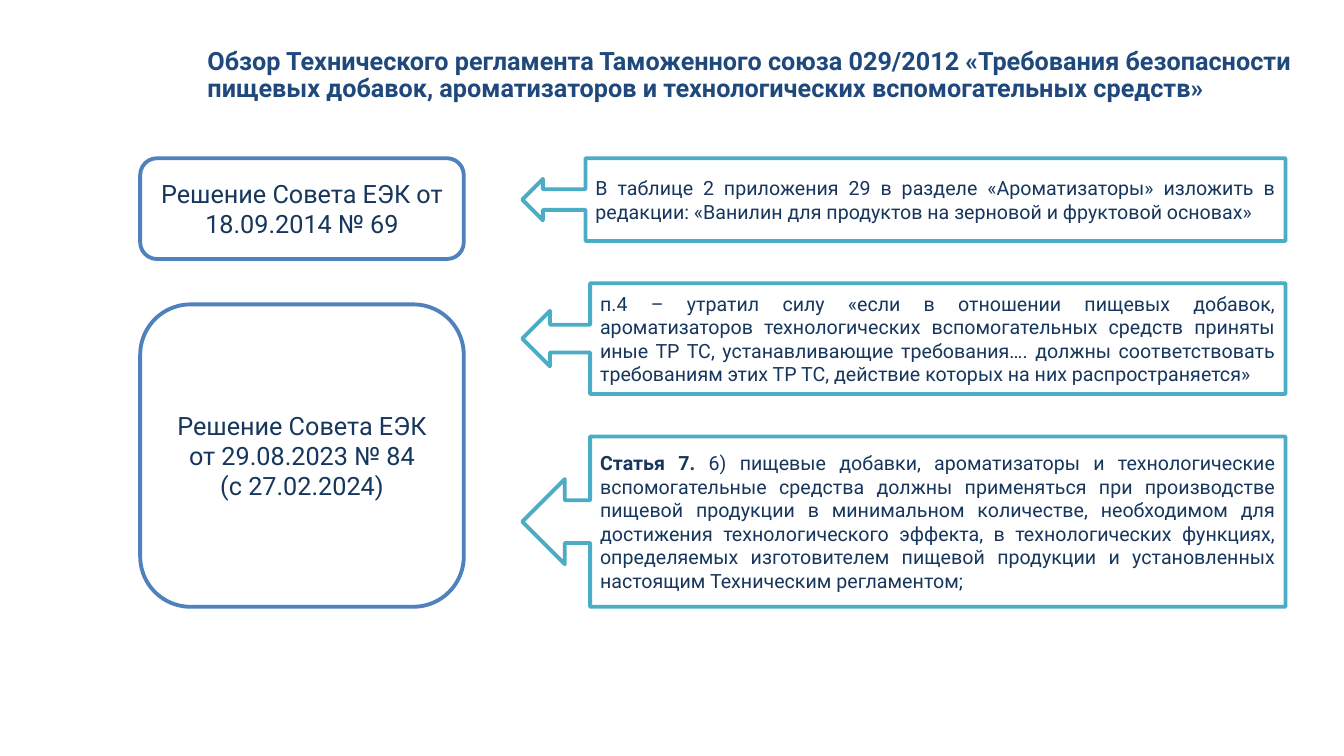
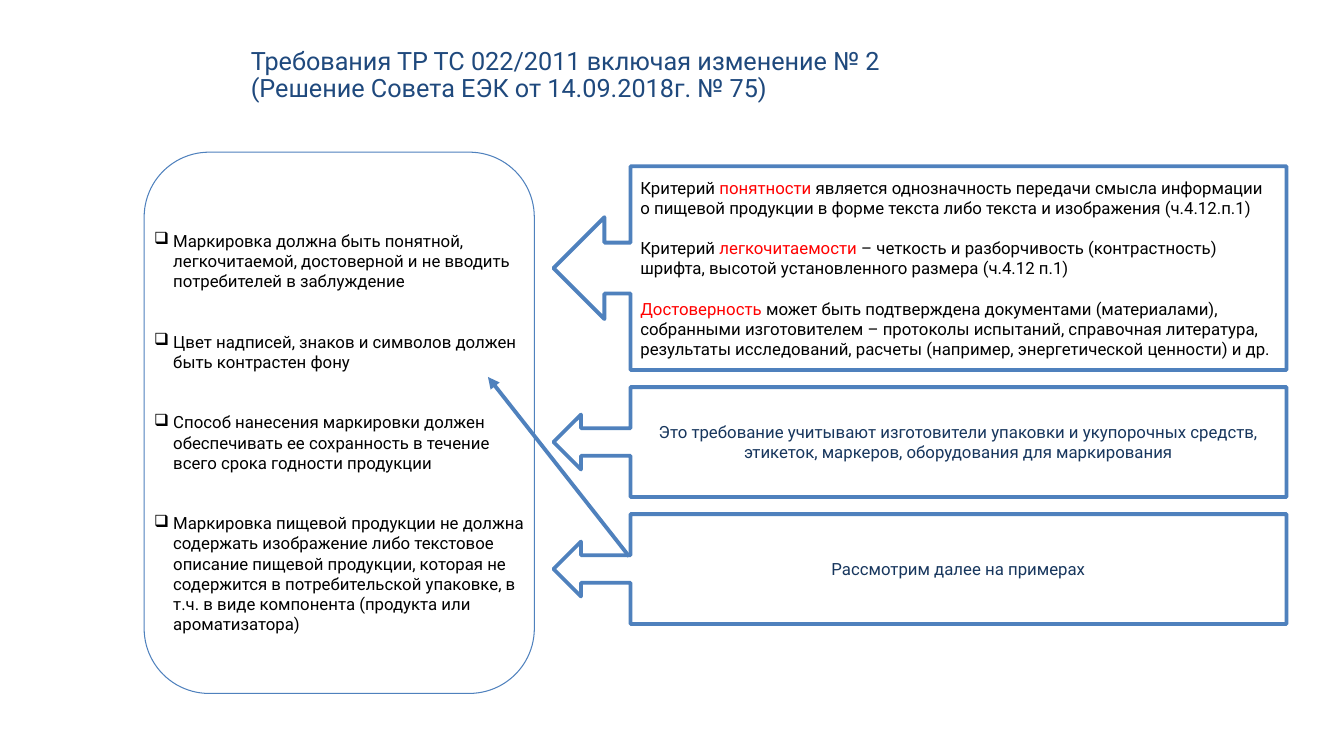
from lxml import etree
from pptx import Presentation
from pptx.dml.color import RGBColor
from pptx.enum.shapes import MSO_CONNECTOR, MSO_SHAPE
from pptx.enum.text import MSO_ANCHOR, PP_ALIGN
from pptx.oxml.ns import qn
from pptx.util import Inches, Pt

FONT = "Roboto"
COLORS = {
    "title": "1F497D", "navy": "17365D", "blue": "4F81BD", "teal": "4BACC6",
    "white": "FFFFFF", "black": "000000", "red": "FF0000",
}
THICK, THIN = 2.75, 0.75
BULLET_INDENT = 0.19

# Content: text is a list of paragraphs; a paragraph is a string or a list of
# (text, overrides) runs
RED = {"color": "red"}

AMENDMENTS_TITLE = (
    "Обзор Технического регламента Таможенного союза 029/2012 «Требования безопасности "
    "пищевых добавок, ароматизаторов и технологических вспомогательных средств»")
DECISIONS = [  # height, paragraphs
    (1, ["Решение Совета ЕЭК от 18.09.2014 № 69"]),
    (3, ["Решение Совета ЕЭК от 29.08.2023 № 84", "(с 27.02.2024)"]),
]
AMENDMENTS = [  # height, share of the width taken by the box, paragraphs
    (0.82, 0.917, [
        "В таблице 2 приложения 29 в разделе «Ароматизаторы» изложить в редакции: "
        "«Ванилин для продуктов на зерновой и фруктовой основах»"]),
    (1.1, 0.911, [
        "п.4 – утратил силу «если в отношении пищевых добавок, ароматизаторов "
        "технологических вспомогательных средств приняты иные ТР ТС, устанавливающие "
        "требования…. должны соответствовать требованиям этих ТР ТС, действие которых "
        "на них распространяется»"]),
    (1.69, 0.911, [[
        ("Статья 7. ", {"bold": True}),
        ("6) пищевые добавки, ароматизаторы и технологические вспомогательные средства "
         "должны применяться при производстве пищевой продукции в минимальном количестве, "
         "необходимом для достижения технологического эффекта, в технологических функциях, "
         "определяемых изготовителем пищевой продукции и установленных настоящим "
         "Техническим регламентом;", {})]]),
]

LABELLING_TITLE = ("Требования ТР ТС 022/2011 включая изменение № 2\n"
                   "(Решение Совета ЕЭК от 14.09.2018г. № 75)")
REQUIREMENTS = [
    "Маркировка должна быть понятной, легкочитаемой, достоверной и не вводить "
    "потребителей в заблуждение",
    "Цвет надписей, знаков и символов должен быть контрастен фону",
    "Способ нанесения маркировки должен обеспечивать ее сохранность в течение всего "
    "срока годности продукции",
    "Маркировка пищевой продукции не должна содержать изображение либо текстовое "
    "описание пищевой продукции, которая не содержится в потребительской упаковке, "
    "в т.ч. в виде компонента (продукта или ароматизатора)",
]
CRITERIA = [
    [("Критерий ", {}), ("понятности", RED),
     (" является однозначность передачи смысла информации о пищевой продукции в форме "
      "текста либо текста и изображения (ч.4.12.п.1)", {})],
    [("Критерий ", {}), ("легкочитаемости", RED),
     (" – четкость и разборчивость (контрастность) шрифта, высотой установленного "
      "размера (ч.4.12 п.1)", {})],
    [("Достоверность", RED),
     (" может быть подтверждена документами (материалами), собранными изготовителем – "
      "протоколы испытаний, справочная литература, результаты исследований, расчеты "
      "(например, энергетической ценности) и др.", {})],
]
EXPLANATIONS = [  # height, paragraphs, text format
    (2.02, CRITERIA, {"color": "black", "gap": 14.4}),
    (1.09, ["Это требование учитывают изготовители упаковки и укупорочных средств, "
            "этикеток, маркеров, оборудования для маркирования"],
     {"align": PP_ALIGN.CENTER}),
    (1.09, ["Рассмотрим далее на примерах"], {"align": PP_ALIGN.CENTER}),
]


def rgb(name):
    return RGBColor.from_string(COLORS[name])


def add_bullet(paragraph):
    properties = paragraph._p.get_or_add_pPr()
    properties.set("marL", str(Inches(BULLET_INDENT)))
    properties.set("indent", str(-Inches(BULLET_INDENT)))
    etree.SubElement(properties, qn("a:buChar")).set("char", "❑")


def write_text(shape, paragraphs, size=12, color="navy", bold=False, align=PP_ALIGN.LEFT,
               anchor=MSO_ANCHOR.MIDDLE, gap=0, spacing=None, bullets=False):
    frame = shape.text_frame
    frame.word_wrap = True
    frame.vertical_anchor = anchor
    for index, runs in enumerate(paragraphs):
        paragraph = frame.add_paragraph() if index else frame.paragraphs[0]
        if bullets:
            add_bullet(paragraph)
        paragraph.alignment = align
        if spacing:
            paragraph.line_spacing = spacing
        if index and gap:
            paragraph.space_before = Pt(gap)
        for text, changes in [(runs, {})] if isinstance(runs, str) else runs:
            for number, line in enumerate(text.split("\n")):
                if number:
                    paragraph.add_line_break()
                run = paragraph.add_run()
                run.text = line
                run.font.name = FONT
                run.font.size = Pt(size)
                run.font.bold = changes.get("bold", bold)
                run.font.color.rgb = rgb(changes.get("color", color))


def add_text(slide, box, paragraphs, **style):
    textbox = slide.shapes.add_textbox(*map(Inches, box))
    write_text(textbox, paragraphs, anchor=MSO_ANCHOR.TOP, **style)


def add_box(slide, kind, box, line="blue", width=THICK, fill="white"):
    shape = slide.shapes.add_shape(kind, *map(Inches, box))
    shape.shadow.inherit = False
    if fill:
        shape.fill.solid()
        shape.fill.fore_color.rgb = rgb(fill)
    else:
        shape.fill.background()
    shape.line.color.rgb = rgb(line)
    shape.line.width = Pt(width)
    return shape


def add_callout(slide, box, share, line, paragraphs, **style):
    callout = add_box(slide, MSO_SHAPE.LEFT_ARROW_CALLOUT, box, line)
    callout.adjustments[3] = share
    write_text(callout, paragraphs, **style)


def add_arrow(slide, start, end):
    points = map(Inches, (*start, *end))
    arrow = slide.shapes.add_connector(MSO_CONNECTOR.STRAIGHT, *points)
    arrow.line.color.rgb = rgb("blue")
    arrow.line.width = Pt(THICK)
    etree.SubElement(arrow.line._get_or_add_ln(), qn("a:tailEnd")).set("type", "triangle")
    etree.SubElement(arrow._element.spPr, qn("a:effectLst"))


def add_titled_slide(presentation, title, left, width, bold=False):
    slide = presentation.slides.add_slide(presentation.slide_layouts[6])
    add_text(slide, (left, 0.44, width, 0.68), [title],
             size=18, color="title", bold=bold, spacing=0.89)
    return slide


def build_amendments(presentation):
    slide = add_titled_slide(presentation, AMENDMENTS_TITLE, 1.96, 11.37, bold=True)
    # Decisions on the left
    top = 1.57
    for height, paragraphs in DECISIONS:
        card = add_box(slide, MSO_SHAPE.ROUNDED_RECTANGLE, (1.39, top, 3.21, height))
        write_text(card, paragraphs, size=18, align=PP_ALIGN.CENTER)
        top += height + 0.45
    # Changes on the right
    top = 1.57
    for height, share, paragraphs in AMENDMENTS:
        add_callout(slide, (5.18, top, 7.57, height), share, "teal", paragraphs,
                    size=14, align=PP_ALIGN.JUSTIFY)
        top += height + 0.42


def build_labelling(presentation):
    slide = add_titled_slide(presentation, LABELLING_TITLE, 2.39, 10.5)
    # Requirements on the left
    add_box(slide, MSO_SHAPE.ROUNDED_RECTANGLE, (1.43, 1.51, 3.87, 5.37),
            width=THIN, fill=None)
    add_text(slide, (1.43, 2.24, 3.87, 4.14), REQUIREMENTS,
             color="black", gap=28.8, bullets=True)
    # Explanations on the right
    top = 1.65
    for height, paragraphs, style in EXPLANATIONS:
        add_callout(slide, (5.49, top, 7.27, height), 0.895, "blue", paragraphs, **style)
        top += height + 0.17
    add_arrow(slide, (6.24, 5.52), (4.84, 3.74))


def main():
    presentation = Presentation()
    presentation.slide_width = Inches(13.33)
    presentation.slide_height = Inches(7.5)
    build_amendments(presentation)
    build_labelling(presentation)
    presentation.save("out.pptx")


if __name__ == "__main__":
    main()
